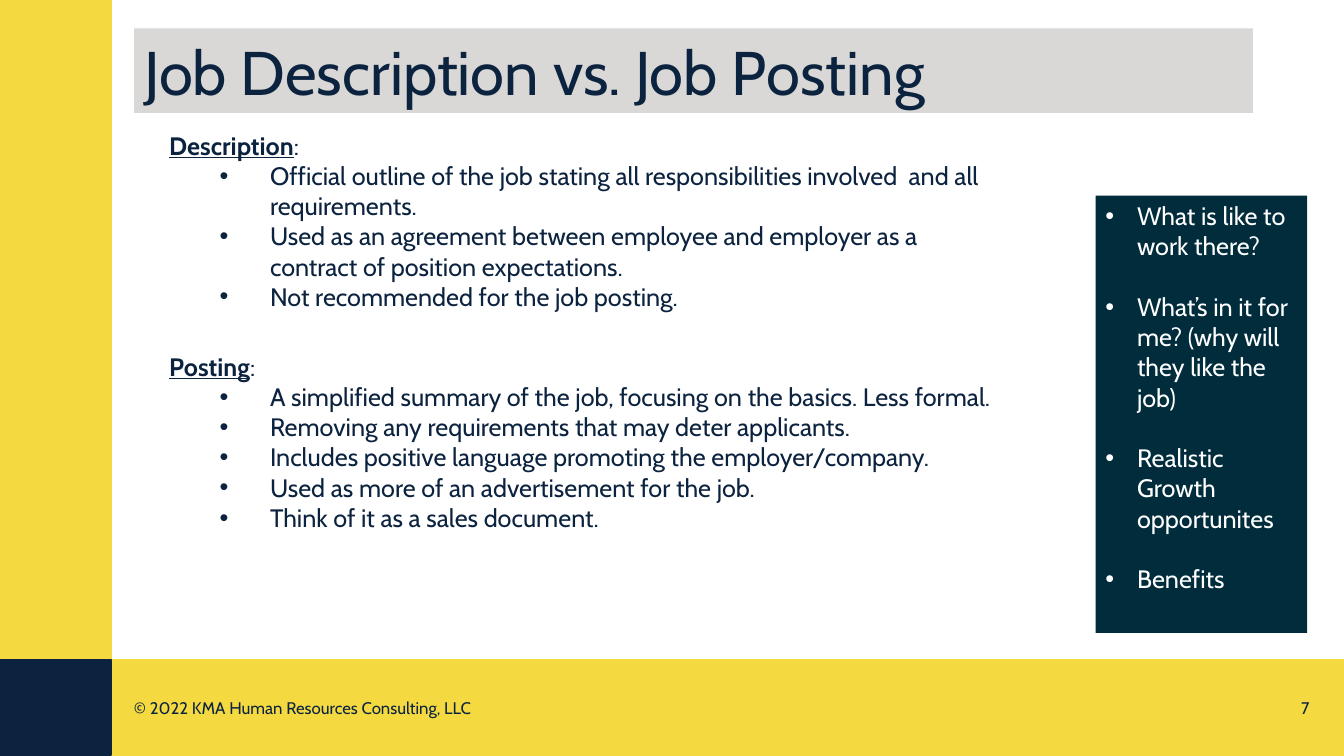
import pptx
import pptx.util
import pptx.dml.color
import pptx.enum.shapes
import pptx.enum.text
import pptx.oxml.ns
import lxml.etree

Pt = pptx.util.Pt
ANCHOR = pptx.enum.text.MSO_ANCHOR
ALIGN = pptx.enum.text.PP_ALIGN
COLOURS = {"yellow": "F4DA40", "navy": "0C2340", "grey": "D9D8D6",
           "teal": "002C3C", "white": "FFFFFF"}


def add_run(paragraph, text, size, colour="navy"):
    run = paragraph.add_run()
    run.text = text
    run.font.name = "Cabin"
    run.font.size = Pt(size)
    run.font.color.rgb = pptx.dml.color.RGBColor.from_string(COLOURS[colour])
    return run


def indent(paragraph, left, hanging=0, bullet=False):
    """Set the left margin and hanging indent in points, with an optional bullet."""
    properties = paragraph._p.get_or_add_pPr()
    properties.set("marL", str(Pt(left)))
    properties.set("indent", str(-Pt(hanging)))
    if bullet:
        font = lxml.etree.SubElement(properties, pptx.oxml.ns.qn("a:buFont"))
        font.set("typeface", "Arial")
        character = lxml.etree.SubElement(properties, pptx.oxml.ns.qn("a:buChar"))
        character.set("char", "•")


presentation = pptx.Presentation()
presentation.slide_width = Pt(960)
presentation.slide_height = Pt(540)
slide = presentation.slides.add_slide(presentation.slide_layouts[5])

# Coloured bands and the sidebar: left, top, width, height, fill, line width
panels = [
    (0, 471.6, 960, 68.4, "yellow", 1.5),
    (0, 0, 79.2, 540, "yellow", 1.5),
    (-0.7, 471, 79.9, 68.4, "navy", 1),
    (782.6, 139.7, 151.2, 312.5, "teal", 0),
]
for left, top, width, height, colour, line_width in panels:
    panel = slide.shapes.add_shape(pptx.enum.shapes.MSO_SHAPE.RECTANGLE,
                                   Pt(left), Pt(top), Pt(width), Pt(height))
    panel.shadow.inherit = False
    rgb = pptx.dml.color.RGBColor.from_string(COLOURS[colour])
    panel.fill.solid()
    panel.fill.fore_color.rgb = rgb
    if line_width:
        panel.line.color.rgb = rgb
        panel.line.width = Pt(line_width)
    else:
        panel.line.fill.background()
sidebar = panel

# Title
title = slide.shapes.title
title.left, title.top, title.width, title.height = Pt(95.8), Pt(20.2), Pt(799.2), Pt(60.5)
title.fill.solid()
title.fill.fore_color.rgb = pptx.dml.color.RGBColor.from_string(COLOURS["grey"])
title.text_frame.vertical_anchor = ANCHOR.MIDDLE
title.text_frame.auto_size = pptx.enum.text.MSO_AUTO_SIZE.NONE
title.text_frame.paragraphs[0].alignment = ALIGN.LEFT
add_run(title.text_frame.paragraphs[0], "Job Description vs. Job Posting", 44)

# The two bulleted sections
sections = [
    ("Description", 89.3, 232, [
        "Official outline of the job stating all responsibilities involved  and all requirements.",
        "Used as an agreement between employee and employer as a contract of position expectations.",
        "Not recommended for the job posting.",
    ]),
    ("Posting", 247.2, 166, [
        "A simplified summary of the job, focusing on the basics. Less formal.",
        "Removing any requirements that may deter applicants.",
        "Includes positive language promoting the employer/company.",
        "Used as more of an advertisement for the job.",
        "Think of it as a sales document.",
    ]),
]
for heading, top, height, points in sections:
    frame = slide.shapes.add_textbox(Pt(77.8), Pt(top), Pt(648), Pt(height)).text_frame
    frame.word_wrap = True
    paragraph = frame.paragraphs[0]
    paragraph.level = 1
    indent(paragraph, 36)
    heading_run = add_run(paragraph, heading, 18)
    heading_run.font.bold = True
    heading_run.font.underline = True
    add_run(paragraph, ":", 18)
    for point in points:
        paragraph = frame.add_paragraph()
        paragraph.level = 2
        indent(paragraph, 108, 36, bullet=True)
        add_run(paragraph, point, 18)

# Sidebar questions
questions = ["What is like to work there?",
             "What’s in it for me? (why will they like the job)",
             "Realistic Growth opportunites",
             "Benefits"]
frame = sidebar.text_frame
frame.word_wrap = True
frame.vertical_anchor = ANCHOR.TOP
for index, question in enumerate(questions):
    paragraph = frame.add_paragraph() if index else frame.paragraphs[0]
    paragraph.alignment = ALIGN.LEFT
    if index:
        paragraph.space_before = Pt(21.6)
    indent(paragraph, 22.5, 22.5, bullet=True)
    add_run(paragraph, question, 18, "white")

# Footer
footers = [
    ("© 2022 KMA Human Resources Consulting, LLC", 88.6, 494.6, 269.3, 21.6, ALIGN.LEFT),
    ("7", 726.5, 491, 216, 28.8, ALIGN.RIGHT),
]
for text, left, top, width, height, alignment in footers:
    frame = slide.shapes.add_textbox(Pt(left), Pt(top), Pt(width), Pt(height)).text_frame
    frame.word_wrap = True
    frame.vertical_anchor = ANCHOR.MIDDLE
    frame.paragraphs[0].alignment = alignment
    add_run(frame.paragraphs[0], text, 12)

presentation.save("out.pptx")
